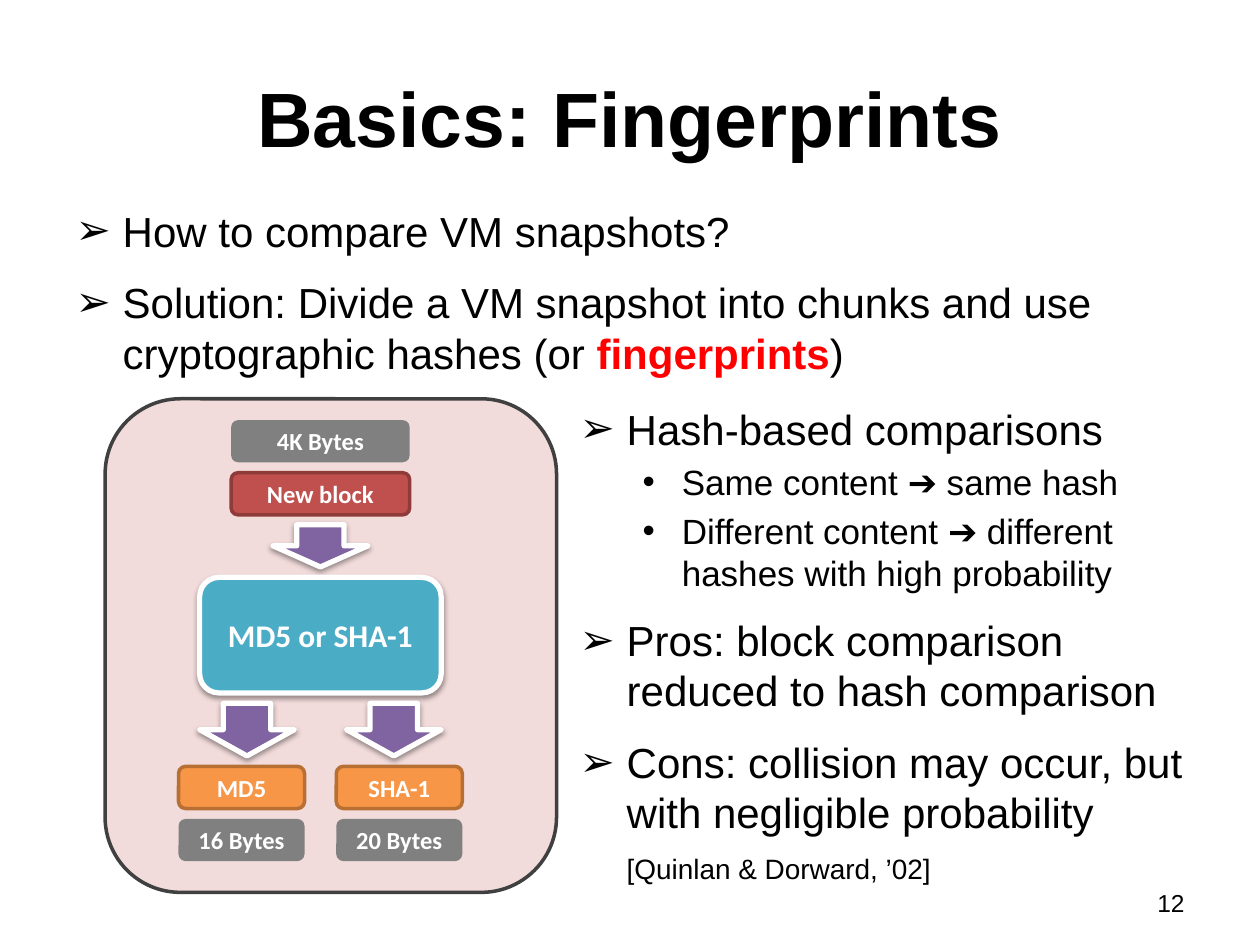
"""Build a slide on fingerprints: two bullet lists beside a hashing diagram."""
from lxml import etree
from pptx import Presentation
from pptx import util as u
from pptx.dml.color import RGBColor
from pptx.enum import shapes, text
from pptx.oxml.ns import qn

THEME = {
    "sans": "Arial", "label": "Calibri",
    "black": "000000", "white": "FFFFFF", "alert": "FF0000",
    "panel": ("F2DCDB", "404040", 2), "block": ("C0504D", "8E3B39", 2),
    "size": ("808080", None, 0), "hash": ("4BACC6", "FFFFFF", 3),
    "arrow": ("8064A2", "FFFFFF", 3), "out": ("F79646", "B76F34", 2),
    "title": 44, "list": 24, "sub": 20, "big": 18, "cite": 16, "small": 14,
}
LEVELS = [("➢", 0.95, -0.95, "list", 12), ("•", 2.06, -0.79, "sub", 4)]

TITLE = "Basics: Fingerprints"
PAGE = "12"
INTRO = [
    (0, [("How to compare VM snapshots?", "")]),
    (0, [("Solution: Divide a VM snapshot into chunks and use cryptographic hashes (or ", ""),
         ("fingerprints", "alert"), (")", "")]),
]
POINTS = [
    (0, [("Hash-based comparisons", "")]),
    (1, [("Same content ➔ same hash", "")]),
    (1, [("Different content ➔ different hashes with high probability", "")]),
    (0, [("Pros: block comparison reduced to hash comparison", "")]),
    (0, [("Cons: collision may occur, but with negligible probability ", ""),
         ("[Quinlan & Dorward, ’02]", "cite"), (" ", "")]),
]
INPUT = [("4K Bytes", "size", 8.47), ("New block", "block", 9.53)]
HASHES = [("MD5", "16 Bytes"), ("SHA-1", "20 Bytes")]
MID, ROW = 6.46, 0.85


def rgb(name):
    return RGBColor.from_string(THEME.get(name, name))


def style(font, face, size, color="black", bold=False):
    font.name, font.size, font.bold = THEME[face], u.Pt(THEME[size]), bold
    font.color.rgb = rgb(color)


def place(item, left, top, width, height):
    item.left, item.top = u.Cm(left), u.Cm(top)
    item.width, item.height = u.Cm(width), u.Cm(height)


def fill_list(holder, rows, box):
    place(holder, *box)
    frame = holder.text_frame
    frame.auto_size = text.MSO_AUTO_SIZE.NONE
    for i, (level, runs) in enumerate(rows):
        para = frame.add_paragraph() if i else frame.paragraphs[0]
        mark, left, hang, size, gap = LEVELS[level]
        para.level, para.space_before = level, u.Pt(gap)
        style(para.font, "sans", size)
        props = para._p.get_or_add_pPr()
        props.set("marL", str(u.Cm(left)))
        props.set("indent", str(u.Cm(hang)))
        bullet = etree.Element(qn("a:buChar"), char=mark)
        props.insert_element_before(bullet, "a:tabLst", "a:defRPr", "a:extLst")
        for words, kind in runs:
            run = para.add_run()
            run.text = words
            style(run.font, "sans", kind if kind == "cite" else size,
                  "alert" if kind == "alert" else "black", kind == "alert")


def cast(shape):
    effects = shape._element.spPr.find(qn("a:effectLst"))
    shade = etree.SubElement(effects, qn("a:outerShdw"), blurRad=str(u.Pt(3.1)),
                             dist=str(u.Pt(1.6)), dir="5400000", rotWithShape="0")
    color = etree.SubElement(shade, qn("a:srgbClr"), val=THEME["black"])
    etree.SubElement(color, qn("a:alpha"), val="38000")


def draw(slide, kind, mid, top, width, height, words="", size="small"):
    form = shapes.MSO_SHAPE
    preset = form.DOWN_ARROW if kind == "arrow" else form.ROUNDED_RECTANGLE
    shape = slide.shapes.add_shape(preset, 0, 0, 0, 0)
    place(shape, mid - width / 2, top, width, height)
    fill, line, weight = THEME[kind]
    shape.fill.solid()
    shape.fill.fore_color.rgb = rgb(fill)
    if line:
        shape.line.color.rgb = rgb(line)
        shape.line.width = u.Pt(weight)
    else:
        shape.line.fill.background()
    shape.shadow.inherit = False
    if kind in ("hash", "arrow"):
        cast(shape)
    if words:
        frame = shape.text_frame
        frame.text = words
        frame.vertical_anchor = text.MSO_ANCHOR.MIDDLE
        para = frame.paragraphs[0]
        para.alignment = text.PP_ALIGN.CENTER
        style(para.font, "label", size, "white", True)


def diagram(slide):
    draw(slide, "panel", 6.67, 8.04, 9.1, 9.95)
    for words, kind, top in INPUT:
        draw(slide, kind, MID, top, 3.6, ROW, words)
    draw(slide, "arrow", MID, 10.58, 1.91, ROW)
    draw(slide, "hash", MID, 11.64, 4.87, 2.33, "MD5 or SHA-1", "big")
    for side, (name, size) in zip((-1, 1), HASHES):
        draw(slide, "arrow", MID + side * 1.48, 14.18, 1.91, 1.06)
        draw(slide, "out", MID + side * 1.59, 15.45, 2.54, ROW, name)
        draw(slide, "size", MID + side * 1.59, 16.51, 2.54, ROW, size)


def main():
    deck = Presentation()
    deck.slide_width, deck.slide_height = u.Cm(25.4), u.Cm(19.05)
    slide = deck.slides.add_slide(deck.slide_layouts[3])
    title, intro, points = slide.placeholders
    place(title, 1.27, 0.76, 22.86, 3.18)
    title.text_frame.text = TITLE
    title.text_frame.vertical_anchor = text.MSO_ANCHOR.MIDDLE
    head = title.text_frame.paragraphs[0]
    head.alignment = text.PP_ALIGN.CENTER
    style(head.font, "sans", "title", bold=True)
    fill_list(intro, INTRO, (1.27, 4.01, 22.02, 4.01))
    fill_list(points, POINTS, (11.43, 8, 12.9, 10.41))
    diagram(slide)
    page = slide.shapes.add_textbox(0, 0, 0, 0)
    place(page, 18.21, 17.78, 5.92, 0.89)
    page.text_frame.word_wrap = True
    page.text_frame.text = PAGE
    para = page.text_frame.paragraphs[0]
    para.alignment = text.PP_ALIGN.RIGHT
    style(para.font, "sans", "small")
    deck.save("out.pptx")


if __name__ == "__main__":
    main()
